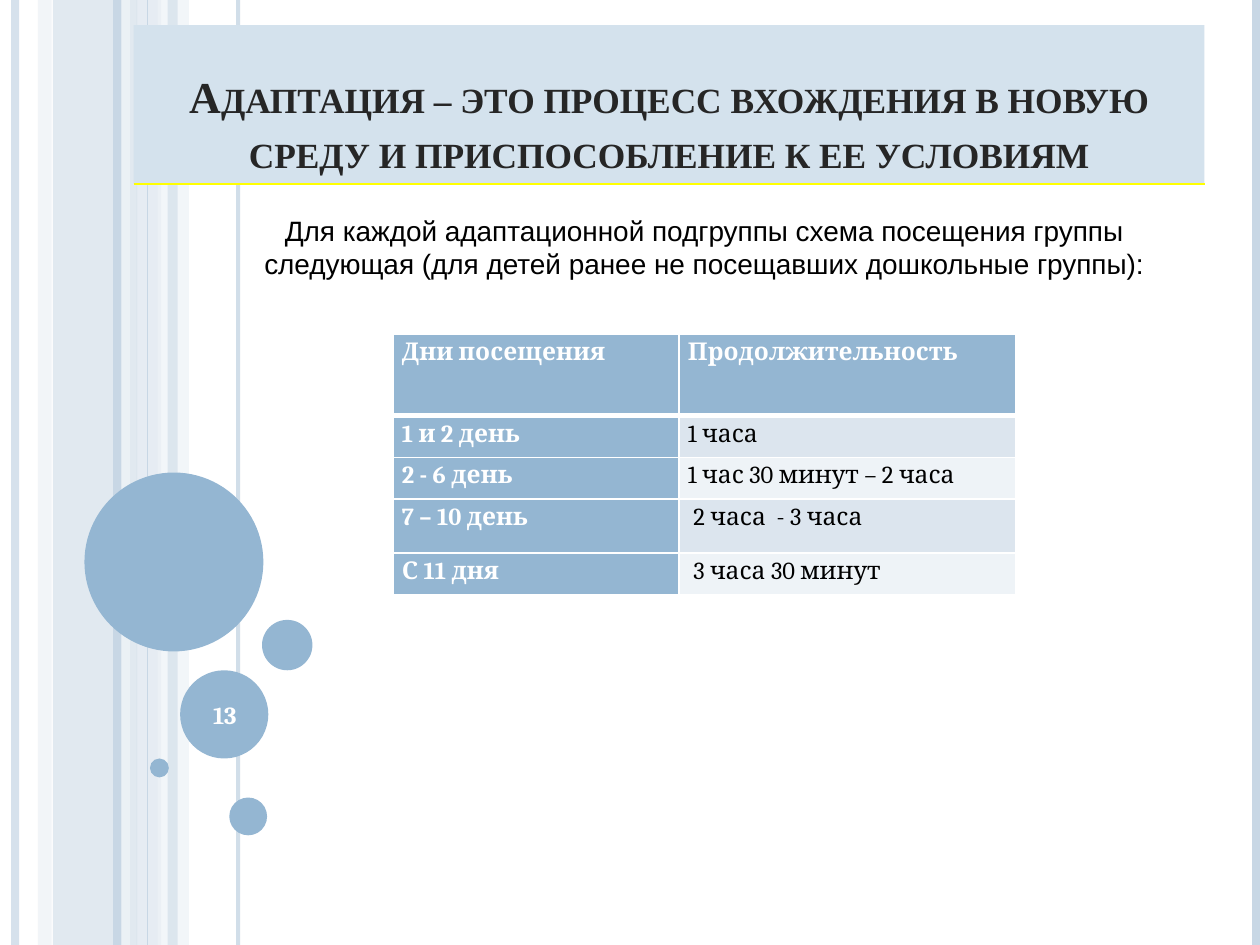
from lxml.etree import SubElement
from pptx import Presentation
from pptx.dml.color import RGBColor
from pptx.enum.shapes import MSO_CONNECTOR, MSO_SHAPE
from pptx.enum.text import MSO_ANCHOR, MSO_AUTO_SIZE, PP_ALIGN
from pptx.oxml.ns import qn
from pptx.util import Inches, Pt

COLS, ROWS = 100, 75
UNIT = Inches(0.1)
BLUE, MIST, PALE, ICE, WHITE = "94B6D2", "C8D7E5", "DCE5EE", "EEF3F7", "FFFFFF"
BARS = [
    (4.2, 6.7, MIST, 54),
    (3, 1.1, PALE, 36),
    (10.8, 2, PALE, 70),
    (12.5, 2.5, ICE, 71),
]
LINES = [
    (1.2, MIST, 4.5, 73),
    (10, ICE, 4.5, 83),
    (9.3, MIST, 4.5, 100),
    (18.9, MIST, 2.25, 82),
    (11.7, MIST, 0.75, 100),
    (99.7, MIST, 4.5, 100),
]
DOTS = [
    (6.7, 37.5, 14.2),
    (14.3, 53.2, 7),
    (11.9, 60.2, 1.5),
    (18.2, 63.3, 3),
    (20.8, 49.2, 4),
]
DATA = [
    ("Дни посещения", "Продолжительность"),
    ("1 и 2 день", "1 часа"),
    ("2 - 6 день", "1 час 30 минут – 2 часа"),
    ("7 – 10 день", " 2 часа  - 3 часа"),
    ("С 11 дня", " 3 часа 30 минут"),
]
WIDTHS = [22.7, 26.7]
HEIGHTS = [6.5, 3.3, 3.3, 4.3, 3.3]


def grid(*sizes):
    return [int(size * UNIT) for size in sizes]


def paint(fill, color, alpha=100):
    fill.solid()
    fill.fore_color.rgb = RGBColor.from_string(color)
    if alpha < 100:
        tint = fill._xPr.find(qn("a:solidFill"))[0]
        SubElement(tint, qn("a:alpha"), val=str(alpha * 1000))


def add_form(slide, kind, box, color, alpha=100):
    form = slide.shapes.add_shape(kind, *grid(*box))
    form.shadow.inherit = False
    form.line.fill.background()
    paint(form.fill, color, alpha)


def add_line(slide, ends, color, width, alpha=100):
    line = slide.shapes.add_connector(MSO_CONNECTOR.STRAIGHT, *grid(*ends))
    line.line.width = Pt(width)
    paint(line.line.fill, color, alpha)
    SubElement(line._element.spPr, qn("a:effectLst"))


def style(para, name, size, color, bold=False, align=PP_ALIGN.CENTER):
    para.alignment = align
    font = para.font
    font.name, font.size, font.bold = name, Pt(size), bold
    font.color.rgb = RGBColor.from_string(color)


def add_text(slide, box, text, *look):
    frame = slide.shapes.add_textbox(*grid(*box)).text_frame
    frame.word_wrap = True
    frame.vertical_anchor = MSO_ANCHOR.MIDDLE
    frame.text = text
    style(frame.paragraphs[0], *look)


def add_title(slide, box, text):
    title = slide.shapes.title
    title.left, title.top, title.width, title.height = grid(*box)
    paint(title.fill, "D4E2ED")
    frame = title.text_frame
    frame.text = text
    frame.auto_size = MSO_AUTO_SIZE.NONE
    frame.vertical_anchor = MSO_ANCHOR.BOTTOM
    para = frame.paragraphs[0]
    style(para, "Times New Roman", 25.2, "262626", True)
    para.line_spacing = 1.05
    para.runs[0].font._element.set("cap", "small")
    slide.shapes._spTree.append(title._element)


def edge(cell, side, width):
    props = cell._tc.get_or_add_tcPr()
    line = SubElement(props, qn("a:" + side), w=str(Pt(width)))
    fill = SubElement(line, qn("a:solidFill"))
    SubElement(fill, qn("a:srgbClr"), val=WHITE)


def fill_cell(cell, text, row, col):
    head = row == 0 or col == 0
    for side in ("lnL", "lnR", "lnT", "lnB"):
        thick = (row, side) in ((0, "lnB"), (1, "lnT"))
        edge(cell, side, 3 if thick else 1)
    paint(cell.fill, BLUE if head else PALE if row % 2 else ICE)
    cell.margin_left = cell.margin_right = Inches(0.07)
    cell.margin_top = cell.margin_bottom = 0
    cell.text = text
    para = cell.text_frame.paragraphs[0]
    style(para, "Cambria", 14, WHITE if head else "000000", head, PP_ALIGN.JUSTIFY)
    para.line_spacing = 1.15


def add_table(slide, left, top):
    box = grid(left, top, sum(WIDTHS), sum(HEIGHTS))
    table = slide.shapes.add_table(len(DATA), len(WIDTHS), *box).table
    table.first_row = table.horz_banding = False
    for col, width in zip(table.columns, grid(*WIDTHS)):
        col.width = width
    for row, height in zip(table.rows, grid(*HEIGHTS)):
        row.height = height
    for row, texts in enumerate(DATA):
        for col, text in enumerate(texts):
            fill_cell(table.cell(row, col), text, row, col)


def main():
    deck = Presentation()
    deck.slide_width, deck.slide_height = grid(COLS, ROWS)
    slide = deck.slides.add_slide(deck.slide_layouts[5])
    for left, width, color, alpha in BARS:
        add_form(slide, MSO_SHAPE.RECTANGLE, (left, 0, width, ROWS), color, alpha)
    for left, color, width, alpha in LINES:
        add_line(slide, (left, 0, left, ROWS), color, width, alpha)
    add_form(slide, MSO_SHAPE.RECTANGLE, (13.3, 0, 0.8, ROWS), MIST, 51)
    for left, top, size in DOTS:
        add_form(slide, MSO_SHAPE.OVAL, (left, top, size, size), BLUE)
    add_title(
        slide,
        (10.6, 2, 85, 12.6),
        "Адаптация – это процесс вхождения в новую среду и приспособление к ее условиям",
    )
    add_line(slide, (10.6, 14.6, 95.6, 14.6), "FFFF00", 1)
    add_text(slide, (14.5, 53.9, 6.7, 5.7), "13", "Cambria", 14, WHITE, True)
    add_table(slide, 31.2, 26.5)
    add_text(
        slide,
        (19.3, 16.4, 73.2, 6.4),
        "Для каждой адаптационной подгруппы схема посещения группы следующая "
        "(для детей ранее не посещавших дошкольные группы):",
        "Arial", 16, "000000",
    )
    deck.save("out.pptx")


if __name__ == "__main__":
    main()
